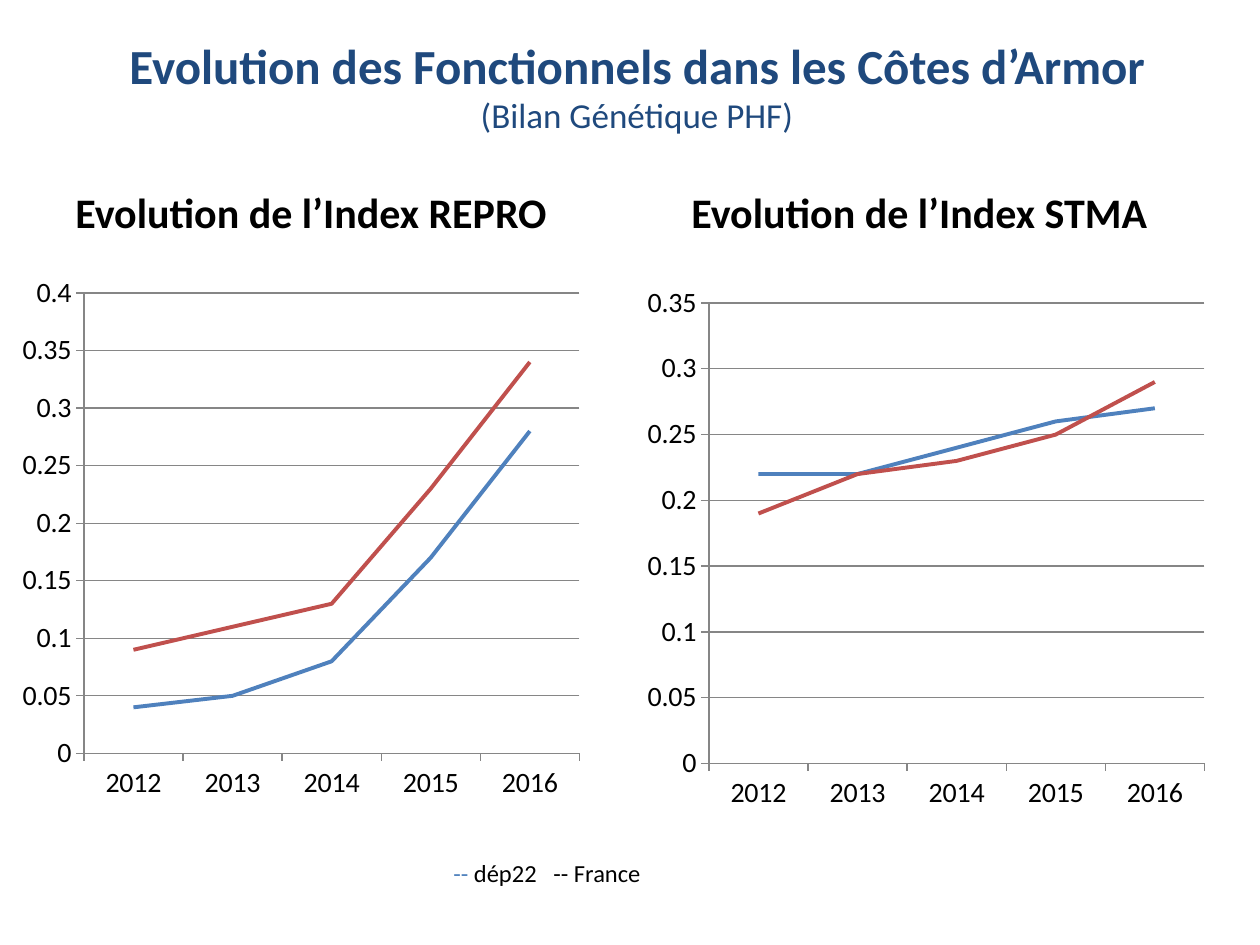
from lxml import etree
from pptx import Presentation
from pptx.chart.data import CategoryChartData
from pptx.dml.color import RGBColor
from pptx.enum.chart import XL_CHART_TYPE, XL_MARKER_STYLE, XL_TICK_MARK
from pptx.enum.text import MSO_ANCHOR, PP_ALIGN
from pptx.oxml.ns import qn
from pptx.util import Emu, Pt

LINE_CHART = XL_CHART_TYPE.LINE
NO_MARKER = XL_MARKER_STYLE.NONE
TICK_OUTSIDE, TICK_NONE = XL_TICK_MARK.OUTSIDE, XL_TICK_MARK.NONE
LEFT, CENTER = PP_ALIGN.LEFT, PP_ALIGN.CENTER
TOP, MIDDLE, BOTTOM = MSO_ANCHOR.TOP, MSO_ANCHOR.MIDDLE, MSO_ANCHOR.BOTTOM

EMU_PER_PX = 914400 // 126
FONT = "Calibri"
NAVY, BLACK, GRAY = "1F497D", "000000", "868686"
BLUE, RED = "4F81BD", "C0504D"

YEARS = ["2012", "2013", "2014", "2015", "2016"]
SERIES = [("dép22", BLUE), ("France", RED)]

TITLE_BOX = (54, 37, 1166, 97)
TITLE = [
    ("Evolution des Fonctionnels dans les Côtes d’Armor", {"size": 28, "bold": True}),
    ("\n", {}),
    ("(Bilan Génétique PHF)", {"size": 20}),
]
LEGEND_BOX = (441, 852, 268, 43)
LEGEND_TAB = 100
LEGEND = [
    ("--", {"color": BLUE, "outline": BLUE}),
    (" dép22\t", {}),
    ("--", {"outline": RED}),
    (" France", {}),
]
PANELS = [
    {
        "heading": "Evolution de l’Index REPRO",
        "heading_box": (63, 155, 557, 88),
        "chart_box": (11, 265, 580, 546),
        "values": [[0.04, 0.05, 0.08, 0.17, 0.28], [0.09, 0.11, 0.13, 0.23, 0.34]],
        "maximum": 0.4,
    },
    {
        "heading": "Evolution de l’Index STMA",
        "heading_box": (679, 155, 557, 88),
        "chart_box": (636, 275, 580, 546),
        "values": [[0.22, 0.22, 0.24, 0.26, 0.27], [0.19, 0.22, 0.23, 0.25, 0.29]],
        "maximum": 0.35,
    },
]


def px(length):
    return Emu(length * EMU_PER_PX)


def rgb(value):
    return RGBColor.from_string(value)


def set_font(font, size, color, bold=False):
    font.name = FONT
    font.size = Pt(size)
    font.bold = bold
    font.color.rgb = rgb(color)


def outline_text(run, color):
    line = etree.Element(qn("a:ln"), w=str(Pt(0.75)))
    fill = etree.SubElement(line, qn("a:solidFill"))
    etree.SubElement(fill, qn("a:srgbClr"), val=color)
    run.font._element.insert(0, line)


def add_tab_stop(paragraph, position):
    tabs = etree.SubElement(paragraph._p.get_or_add_pPr(), qn("a:tabLst"))
    etree.SubElement(tabs, qn("a:tab"), pos=str(px(position)), algn="l")


def add_text(slide, box, runs, size=14, color=BLACK, bold=False,
             align=LEFT, anchor=TOP, tab=None):
    """Add one paragraph of (text, format) runs; a newline run is a line break."""
    shape = slide.shapes.add_textbox(*map(px, box))
    frame = shape.text_frame
    frame.word_wrap = True
    frame.vertical_anchor = anchor
    paragraph = frame.paragraphs[0]
    paragraph.alignment = align
    if tab:
        add_tab_stop(paragraph, tab)
    for text, style in runs:
        if text == "\n":
            paragraph.add_line_break()
            continue
        run = paragraph.add_run()
        run.text = text
        set_font(run.font, style.get("size", size), style.get("color", color),
                 style.get("bold", bold))
        if "outline" in style:
            outline_text(run, style["outline"])


def style_line(line, color, width):
    line.color.rgb = rgb(color)
    line.width = Pt(width)


def add_line_chart(slide, box, values, maximum):
    data = CategoryChartData(number_format="General")
    data.categories = YEARS
    for (name, _), numbers in zip(SERIES, values):
        data.add_series(name, numbers)
    chart = slide.shapes.add_chart(LINE_CHART, *map(px, box), data).chart
    chart.has_title = False
    chart.has_legend = False
    set_font(chart.font, 16, BLACK)
    chart.plots[0].vary_by_categories = False

    for axis in (chart.category_axis, chart.value_axis):
        axis.major_tick_mark = TICK_OUTSIDE
        axis.minor_tick_mark = TICK_NONE
        style_line(axis.format.line, GRAY, 0.75)
    value_axis = chart.value_axis
    value_axis.minimum_scale = 0
    value_axis.maximum_scale = maximum
    value_axis.major_unit = 0.05
    value_axis.tick_labels.number_format = "General"
    value_axis.tick_labels.number_format_is_linked = False
    value_axis.has_major_gridlines = True
    style_line(value_axis.major_gridlines.format.line, GRAY, 0.75)

    for series, (_, color) in zip(chart.plots[0].series, SERIES):
        series.smooth = False
        series.marker.style = NO_MARKER
        style_line(series.format.line, color, 2.25)


def main():
    presentation = Presentation()
    presentation.slide_width = px(1260)
    presentation.slide_height = px(945)
    slide = presentation.slides.add_slide(presentation.slide_layouts[6])

    add_text(slide, TITLE_BOX, TITLE, color=NAVY, align=CENTER, anchor=MIDDLE)
    for panel in PANELS:
        add_text(slide, panel["heading_box"], [(panel["heading"], {})],
                 size=24, bold=True, anchor=BOTTOM)
        add_line_chart(slide, panel["chart_box"], panel["values"], panel["maximum"])
    add_text(slide, LEGEND_BOX, LEGEND, tab=LEGEND_TAB)
    presentation.save("out.pptx")


if __name__ == "__main__":
    main()
